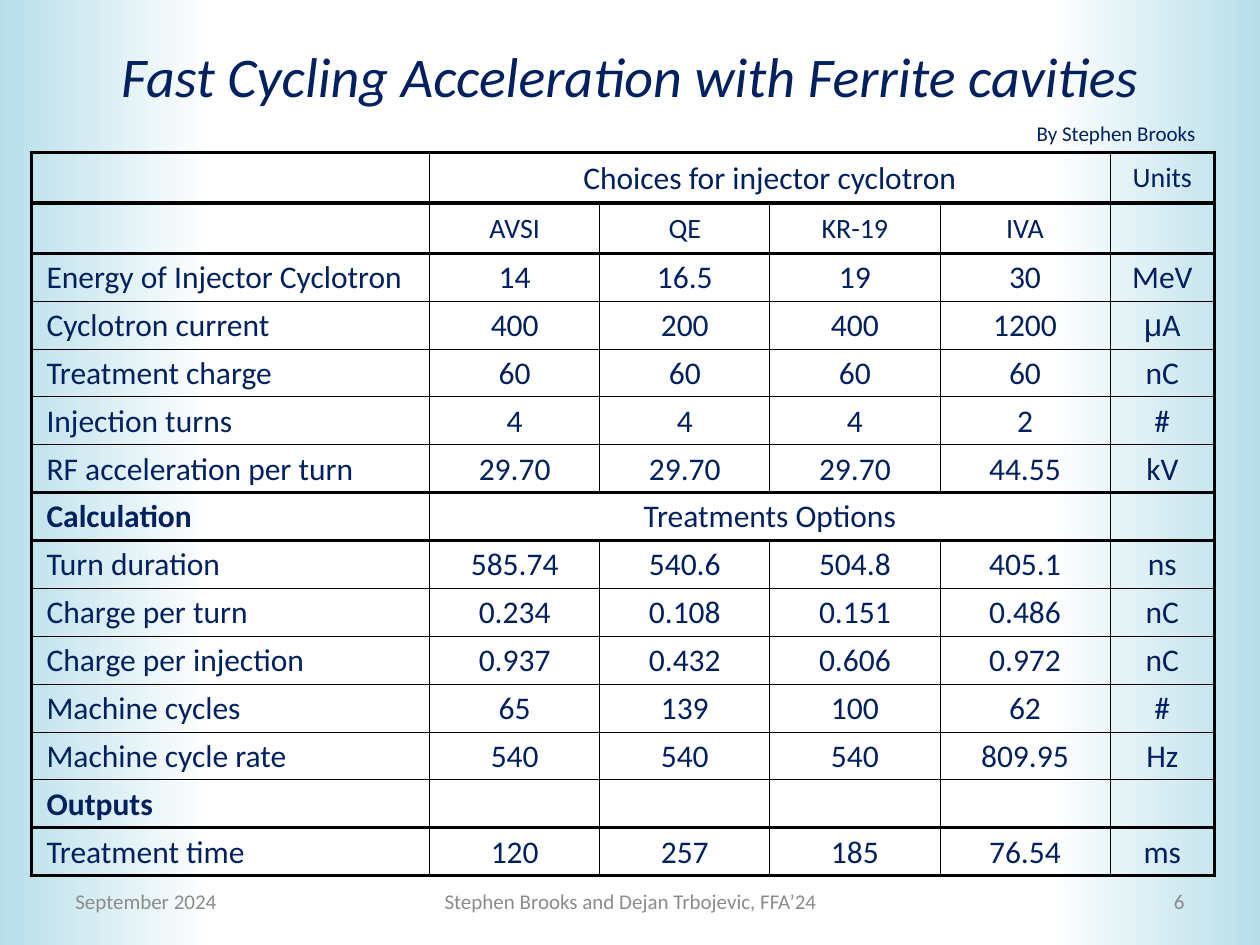
from dataclasses import dataclass

from lxml.etree import SubElement
from pptx import Presentation
from pptx.dml.color import RGBColor
from pptx.enum.shapes import MSO_SHAPE
from pptx.enum.text import MSO_ANCHOR as Anchor, PP_ALIGN as Align
from pptx.oxml.ns import qn
from pptx.util import Inches, Pt

COLORS = {
    "navy": "002060",
    "footer": "8C8C8C",
    "number": "898989",
    "aqua": "B7DEE8",
    "white": "FFFFFF",
    "black": "000000",
}

COLUMN_WIDTHS = [3.16, 1.35, 1.35, 1.35, 1.35, 0.83]
ROW_HEIGHTS = [0.4] * 2 + [0.38] * 13
THIN, THICK = 0.5, 2.25
THICK_ROW_EDGES = {0, 1, 2, 7, 8, 14, 15}
THICK_COLUMN_EDGES = {0, 6}
HEADER_ROWS = 2
SPANNING_ROWS = {0, 7}
SECTION_TITLES = {"Calculation", "Outputs"}
SMALL_LABELS_ROW = 1

ROWS = [
    ["", "Choices for injector cyclotron", "", "", "", "Units"],
    ["", "AVSI", "QE", "KR-19", "IVA", ""],
    ["Energy of Injector Cyclotron", "14", "16.5", "19", "30", "MeV"],
    ["Cyclotron current", "400", "200", "400", "1200", "μA"],
    ["Treatment charge", "60", "60", "60", "60", "nC"],
    ["Injection turns", "4", "4", "4", "2", "#"],
    ["RF acceleration per turn", "29.70", "29.70", "29.70", "44.55", "kV"],
    ["Calculation", "Treatments Options", "", "", "", ""],
    ["Turn duration", "585.74", "540.6", "504.8", "405.1", "ns"],
    ["Charge per turn", "0.234", "0.108", "0.151", "0.486", "nC"],
    ["Charge per injection", "0.937", "0.432", "0.606", "0.972", "nC"],
    ["Machine cycles", "65", "139", "100", "62", "#"],
    ["Machine cycle rate", "540", "540", "540", "809.95", "Hz"],
    ["Outputs", "", "", "", "", ""],
    ["Treatment time", "120", "257", "185", "76.54", "ms"],
]


@dataclass
class Caption:
    text: str
    left: float
    top: float
    width: float
    height: float
    align: Align
    color: str
    wrap: bool = True


@dataclass
class Band:
    left: float
    rotation: int


CAPTIONS = [
    Caption("Stephen Brooks and Dejan Trbojevic, FFA’24", 3.42, 6.95, 3.17, 0.4, Align.CENTER, "footer"),
    Caption("6", 7.17, 6.95, 2.33, 0.4, Align.RIGHT, "number"),
    Caption("By Stephen Brooks", 8.13, 0.91, 1.56, 0.3, Align.LEFT, "navy", wrap=False),
    Caption("September 2024", 0.5, 6.95, 2.33, 0.4, Align.LEFT, "footer"),
]
BANDS = [Band(8.31, 180), Band(0, 0)]


def rgb(name: str) -> RGBColor:
    return RGBColor.from_string(COLORS[name])


def add_run(paragraph, text: str, size: float, color: str,
            bold: bool = False, italic: bool = False, font: str = "Calibri") -> None:
    run = paragraph.add_run()
    run.text = text
    run.font.name = font
    run.font.size = Pt(size)
    run.font.bold = bold
    run.font.italic = italic
    run.font.color.rgb = rgb(color)


def draw_band(slide, band: Band) -> None:
    shape = slide.shapes.add_shape(
        MSO_SHAPE.RECTANGLE, Inches(band.left), Inches(0), Inches(1.69), Inches(7.5))
    shape.shadow.inherit = False
    shape.rotation = band.rotation
    shape.line.fill.background()
    shape.fill.gradient()
    shape.fill.gradient_angle = 0
    for stop, color in zip(shape.fill.gradient_stops, ("aqua", "white")):
        stop.color.rgb = rgb(color)


def draw_title(slide, text: str) -> None:
    title = slide.shapes.title
    title.left, title.top = Inches(0), Inches(0.13)
    title.width, title.height = Inches(10), Inches(0.94)
    title.element.getparent().append(title.element)
    title.text_frame.vertical_anchor = Anchor.MIDDLE
    paragraph = title.text_frame.paragraphs[0]
    paragraph.alignment = Align.CENTER
    add_run(paragraph, text, 32, "navy", italic=True)


def draw_caption(slide, caption: Caption) -> None:
    box = slide.shapes.add_textbox(
        Inches(caption.left), Inches(caption.top), Inches(caption.width), Inches(caption.height))
    frame = box.text_frame
    frame.word_wrap = caption.wrap
    frame.vertical_anchor = Anchor.MIDDLE
    paragraph = frame.paragraphs[0]
    paragraph.alignment = caption.align
    add_run(paragraph, caption.text, 12, caption.color)


def set_borders(cell, row: int, column: int) -> None:
    edges = {
        "a:lnL": column in THICK_COLUMN_EDGES,
        "a:lnR": column + 1 in THICK_COLUMN_EDGES,
        "a:lnT": row in THICK_ROW_EDGES,
        "a:lnB": row + 1 in THICK_ROW_EDGES,
    }
    properties = cell._tc.get_or_add_tcPr()
    for tag, thick in edges.items():
        line = SubElement(properties, qn(tag), w=str(Pt(THICK if thick else THIN)))
        fill = SubElement(line, qn("a:solidFill"))
        SubElement(fill, qn("a:srgbClr"), val=COLORS["black"])


def fill_cell(cell, text: str, row: int, column: int) -> None:
    is_label = column == 0
    cell.margin_left = Inches(0.12 if is_label else 0.01)
    cell.margin_right = cell.margin_top = Inches(0.01)
    cell.margin_bottom = Inches(0)
    cell.vertical_anchor = Anchor.MIDDLE
    set_borders(cell, row, column)
    cell.fill.background()
    paragraph = cell.text_frame.paragraphs[0]
    paragraph.alignment = Align.LEFT if is_label else Align.CENTER
    is_small = row == SMALL_LABELS_ROW or (row < HEADER_ROWS and column == 5)
    size = 16 if is_small else 18
    paragraph.font.size = Pt(size)
    if text.startswith("μ"):
        add_run(paragraph, "μ", size, "navy", font="Arial")
        text = text[1:]
    if text:
        add_run(paragraph, text, size, "navy", bold=text in SECTION_TITLES)


def draw_table(slide) -> None:
    frame = slide.shapes.add_table(
        len(ROWS), len(COLUMN_WIDTHS), Inches(0.25), Inches(1.21),
        Inches(sum(COLUMN_WIDTHS)), Inches(sum(ROW_HEIGHTS)))
    table = frame.table
    table.first_row = table.horz_banding = False
    for column, width in zip(table.columns, COLUMN_WIDTHS):
        column.width = Inches(width)
    for row, height in zip(table.rows, ROW_HEIGHTS):
        row.height = Inches(height)
    for row in SPANNING_ROWS:
        table.cell(row, 1).merge(table.cell(row, 4))
    for row, texts in enumerate(ROWS):
        for column, text in enumerate(texts):
            fill_cell(table.cell(row, column), text, row, column)


def main() -> None:
    presentation = Presentation()
    presentation.slide_width, presentation.slide_height = Inches(10), Inches(7.5)
    slide = presentation.slides.add_slide(presentation.slide_layouts[5])
    for band in BANDS:
        draw_band(slide, band)
    draw_title(slide, "Fast Cycling Acceleration with Ferrite cavities")
    draw_table(slide)
    for caption in CAPTIONS:
        draw_caption(slide, caption)
    presentation.save("out.pptx")


if __name__ == "__main__":
    main()
